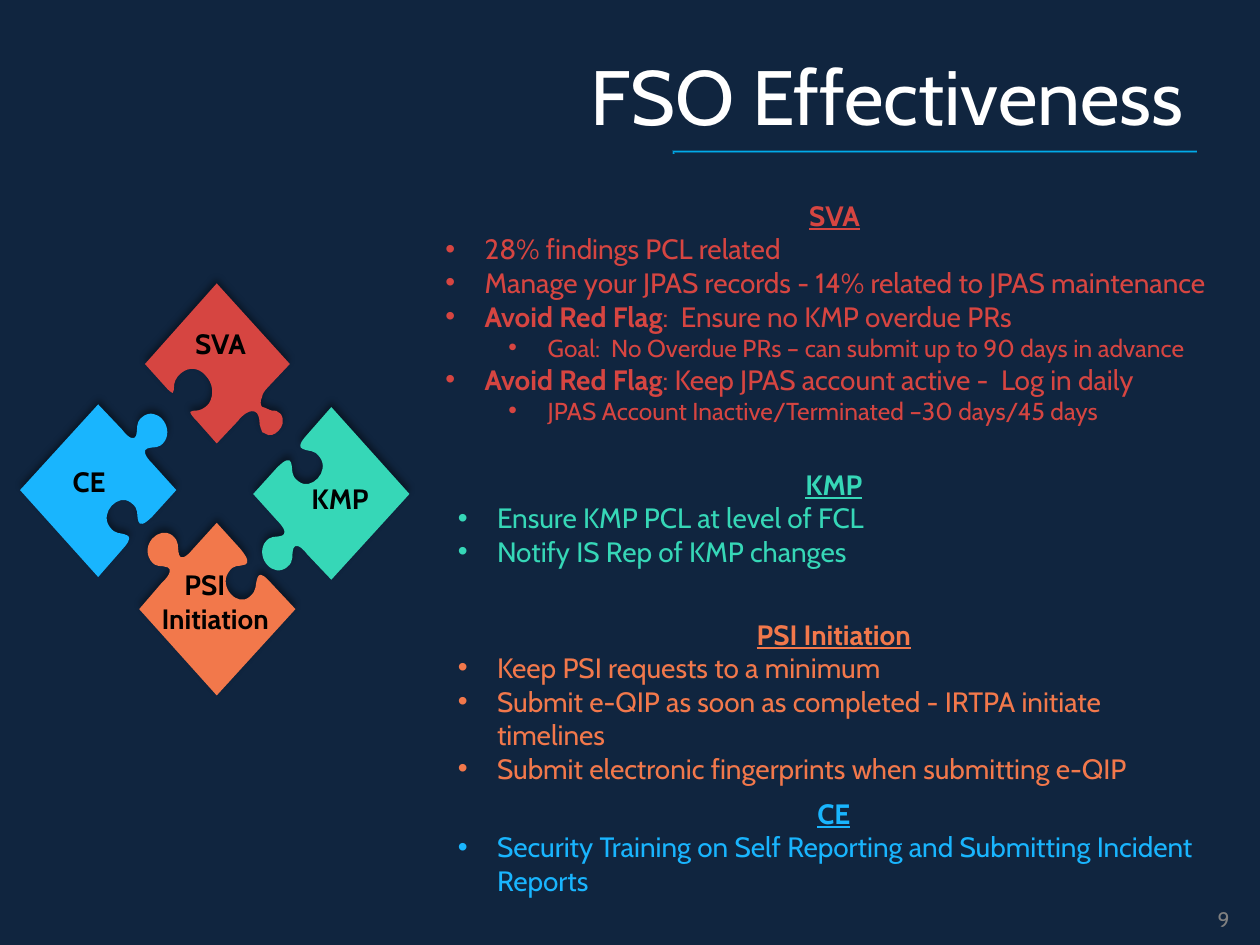
from pptx import Presentation
from pptx.dml.color import RGBColor
from pptx.enum.shapes import MSO_SHAPE
from pptx.enum.text import MSO_ANCHOR, MSO_AUTO_SIZE, PP_ALIGN
from pptx.oxml import parse_xml
from pptx.oxml.ns import nsdecls, qn
from pptx.util import Cm, Pt

NAVY, RED, TEAL, ORANGE, BLUE = "10253F", "D64541", "36D7B7", "F2784B", "19B5FE"
LIST_INSET = (0.33, 0.18)
UNIT = 0.0254  # cm per outline unit
HALF_W, HALF_H = 62, 68.5

# Outlines around the piece centre: pairs are corners, sixes are cubic curves
SIDE_PIECE = [
    (-26, -10), (-33, -15, -30, -19, -32, -25), (-33, -28, -36, -28, -43, -21),
    (-62, 0), (-43, 21), (-36, 28, -36, 32, -39, 33),
    (-45, 35, -48, 32, -53, 39), (-60, 51, -46, 67, -35, 58),
    (-29, 53, -32, 49, -30, 43), (-29, 40, -25, 40, -19, 48),
    (0, 68), (62, 0), (0, -69), (-21, -45), (-26, -39, -25, -37, -23, -36),
    (-17, -33, -14, -36, -9, -29), (-1, -18, -16, -2, -26, -10),
]
TOP_PIECE = [
    (-16, 45), (-20, 41, -21, 39, -21, 38), (-20, 37, -18, 37, -17, 37),
    (-14, 37, -10, 36, -6, 31), (-2, 24, -3, 15, -9, 9),
    (-14, 3, -22, 2, -28, 7), (-33, 11, -34, 15, -34, 19),
    (-34, 20, -34, 21, -35, 23), (-35, 23, -37, 22, -39, 20),
    (-57, 0), (0, -64), (58, 0), (41, 18), (38, 21, 36, 24, 36, 26),
    (34, 30, 35, 33, 36, 34), (37, 34, 38, 35, 39, 35),
    (41, 36, 43, 37, 44, 37), (47, 37, 48, 37, 50, 39),
    (50, 39, 50, 40, 51, 40), (54, 45, 52, 50, 49, 53),
    (46, 56, 42, 58, 38, 55), (37, 54, 37, 54, 36, 54),
    (35, 52, 35, 50, 34, 48), (34, 46, 34, 44, 33, 41),
    (33, 40, 32, 40, 32, 39), (27, 34, 19, 42, 17, 45), (0, 63),
]


def rgb(value):
    return RGBColor.from_string(value)


def pairs(seg):
    return list(zip(seg[::2], seg[1::2]))


def turn(point, quarters):
    """Rotate by quarter turns within the same bounding diamond."""
    x, y = point
    for _ in range(quarters):
        x, y = -y * HALF_W / HALF_H, x * HALF_H / HALF_W
    return x, y


class Deck:
    font = "Cabin"

    def __init__(self):
        self.prs = Presentation()
        self.prs.slide_width, self.prs.slide_height = Cm(25.4), Cm(19.05)
        self.s = self.prs.slides.add_slide(self.prs.slide_layouts[1])
        fill = self.s.background.fill
        fill.solid()
        fill.fore_color.rgb = rgb(NAVY)

    def place(self, sp, box):
        for name, value in zip(("left", "top", "width", "height"), box):
            setattr(sp, name, Cm(value))

    def frame(self, sp, inset=(0.25, 0.13), anchor=MSO_ANCHOR.TOP):
        tf = sp.text_frame
        side, end = Cm(inset[0]), Cm(inset[1])
        form = dict(word_wrap=True, auto_size=MSO_AUTO_SIZE.NONE, vertical_anchor=anchor,
                    margin_left=side, margin_right=side, margin_top=end, margin_bottom=end)
        for name, value in form.items():
            setattr(tf, name, value)
        return tf

    def run(self, p, text, size, color, bold=False, underline=False):
        r = p.add_run()
        r.text = text
        form = dict(name=self.font, size=Pt(size), bold=bold, underline=underline)
        for name, value in form.items():
            setattr(r.font, name, value)
        r.font.color.rgb = rgb(color)

    def indent(self, p, left, first, bullet=False):
        p.space_before = Pt(0)
        pPr = p._p.get_or_add_pPr()
        pPr.set("marL", str(Cm(left)))
        pPr.set("indent", str(Cm(first)))
        if bullet:
            pPr.append(parse_xml(f'<a:buFont {nsdecls("a")} typeface="Arial"/>'))
            pPr.append(parse_xml(f'<a:buChar {nsdecls("a")} char="•"/>'))
        else:
            pPr.append(parse_xml(f'<a:buNone {nsdecls("a")}/>'))

    def title(self, text, box):
        sp = self.s.shapes.title
        self.place(sp, box)
        p = self.frame(sp, anchor=MSO_ANCHOR.MIDDLE).paragraphs[0]
        p.alignment = PP_ALIGN.RIGHT
        self.run(p, text, 44, "FFFFFF")

    def rule(self, box):
        sp = self.s.shapes.add_shape(MSO_SHAPE.RECTANGLE, *map(Cm, box))
        sp.shadow.inherit = False
        sp.line.fill.background()
        sp.fill.background()
        spPr = sp._element.spPr
        stops = "".join(f'<a:gs pos="{pos}"><a:srgbClr val="{color}"/></a:gs>'
                        for pos, color in ((0, NAVY), (50000, "00B0F0"), (100000, NAVY)))
        spPr.replace(spPr.find(qn("a:noFill")), parse_xml(
            f'<a:gradFill {nsdecls("a")}><a:gsLst>{stops}</a:gsLst>'
            '<a:path path="rect"><a:fillToRect l="100000" t="100000"/></a:path></a:gradFill>'))

    def piece(self, shapes, outline, center, color, quarters=0):
        segs = [[tuple(Cm(c + v * UNIT) for c, v in zip(center, turn(pt, quarters)))
                 for pt in pairs(seg)] for seg in outline]
        builder = shapes.build_freeform(*segs[0][0])
        builder.add_line_segments([seg[-1] for seg in segs[1:]], close=True)
        sp = builder.convert_to_shape()
        spPr = sp._element.spPr
        # Bend the sides that have control points
        for line, seg in zip(list(spPr.iter(qn("a:lnTo"))), segs[1:]):
            if len(seg) == 3:
                pts = "".join(f'<a:pt x="{x - sp.left}" y="{y - sp.top}"/>' for x, y in seg)
                line.getparent().replace(line, parse_xml(
                    f'<a:cubicBezTo {nsdecls("a")}>{pts}</a:cubicBezTo>'))
        sp.fill.solid()
        sp.fill.fore_color.rgb = rgb(color)
        sp.line.fill.background()
        sp.shadow.inherit = False
        spPr.find(qn("a:effectLst")).append(parse_xml(
            f'<a:outerShdw {nsdecls("a")} blurRad="{Pt(4)}" dist="{Pt(3)}" dir="16200000">'
            '<a:srgbClr val="000000"><a:alpha val="40000"/></a:srgbClr></a:outerShdw>'))

    def label(self, shapes, text, box, size=16, color="000000", bold=True,
              inset=LIST_INSET, anchor=MSO_ANCHOR.TOP, indent=None):
        sp = shapes.add_textbox(*map(Cm, box))
        p = self.frame(sp, inset, anchor).paragraphs[0]
        if indent:
            self.indent(p, *indent)
        else:
            p.alignment = PP_ALIGN.CENTER
        self.run(p, text, size, color, bold)

    def bullets(self, heading, items, box, color, sp=None, inset=LIST_INSET):
        """Items are (level, bold lead, text)."""
        sp = sp or self.s.shapes.add_textbox(*map(Cm, box))
        self.place(sp, box)
        tf = self.frame(sp, inset)
        p = tf.paragraphs[0]
        p.alignment = PP_ALIGN.CENTER
        self.indent(p, 0, 0)
        self.run(p, heading, 16, color, bold=True, underline=True)
        for level, lead, text in items:
            p = tf.add_paragraph()
            p.level, p.alignment = level, PP_ALIGN.LEFT
            self.indent(p, 0.79 + 1.27 * level, -0.79, bullet=True)
            size = 16 - 2 * level
            if lead:
                self.run(p, lead, size, color, bold=True)
            self.run(p, text, size, color)


def main():
    deck = Deck()

    # Header and page number
    deck.rule((2.97, 2.96, 21.16, 0.13))
    deck.title("FSO Effectiveness", (2.96, 0.64, 21.16, 2.54))
    deck.label(deck.s.shapes, "9", (24.13, 18.21, 1.07, 0.64), 12, "808080", False,
               (0, 0), MSO_ANCHOR.MIDDLE)

    # Main list
    deck.bullets("SVA", [
        (0, "", "28% findings PCL related"),
        (0, "", "Manage your JPAS records - 14% related to JPAS maintenance"),
        (0, "Avoid Red Flag", ":  Ensure no KMP overdue PRs"),
        (1, "", "Goal:  No Overdue PRs – can submit up to 90 days in advance"),
        (0, "Avoid Red Flag", ": Keep JPAS account active -  Log in daily"),
        (1, "", "JPAS Account Inactive/Terminated –30 days/45 days"),
    ], (8.95, 3.97, 15.75, 4.93), RED, deck.s.placeholders[1], (0.03, 0.03))

    # Puzzle pieces
    puzzle = deck.s.shapes.add_group_shape().shapes
    deck.piece(puzzle, SIDE_PIECE, (6.68, 9.96), TEAL)
    deck.piece(puzzle, TOP_PIECE, (4.37, 7.34), RED)
    deck.piece(puzzle, SIDE_PIECE, (1.98, 9.88), BLUE, quarters=2)
    deck.piece(puzzle, SIDE_PIECE, (4.37, 12.28), ORANGE, quarters=1)

    # Puzzle labels
    for text, left, top in (("SVA", 3.48, 6.4), ("KMP", 5.89, 9.52), ("CE", 0.83, 9.19)):
        deck.label(puzzle, text, (left, top, 1.93, 1.02))
    deck.label(puzzle, "PSI Initiation", (2.75, 11.27, 3.1, 1.7), indent=(0.18, 0.46))

    # Remaining lists
    for heading, color, top, height, lines in (
        ("KMP", TEAL, 9.24, 2.39,
         ["Ensure KMP PCL at level of FCL", "Notify IS Rep of KMP changes"]),
        ("PSI Initiation", ORANGE, 12.26, 3.76,
         ["Keep PSI requests to a minimum",
          "Submit e-QIP as soon as completed - IRTPA initiate timelines",
          "Submit electronic fingerprints when submitting e-QIP"]),
        ("CE", BLUE, 15.87, 2.39,
         ["Security Training on Self Reporting and Submitting Incident Reports"]),
    ):
        deck.bullets(heading, [(0, "", line) for line in lines],
                     (8.9, top, 15.82, height), color)

    deck.prs.save("out.pptx")


if __name__ == "__main__":
    main()
